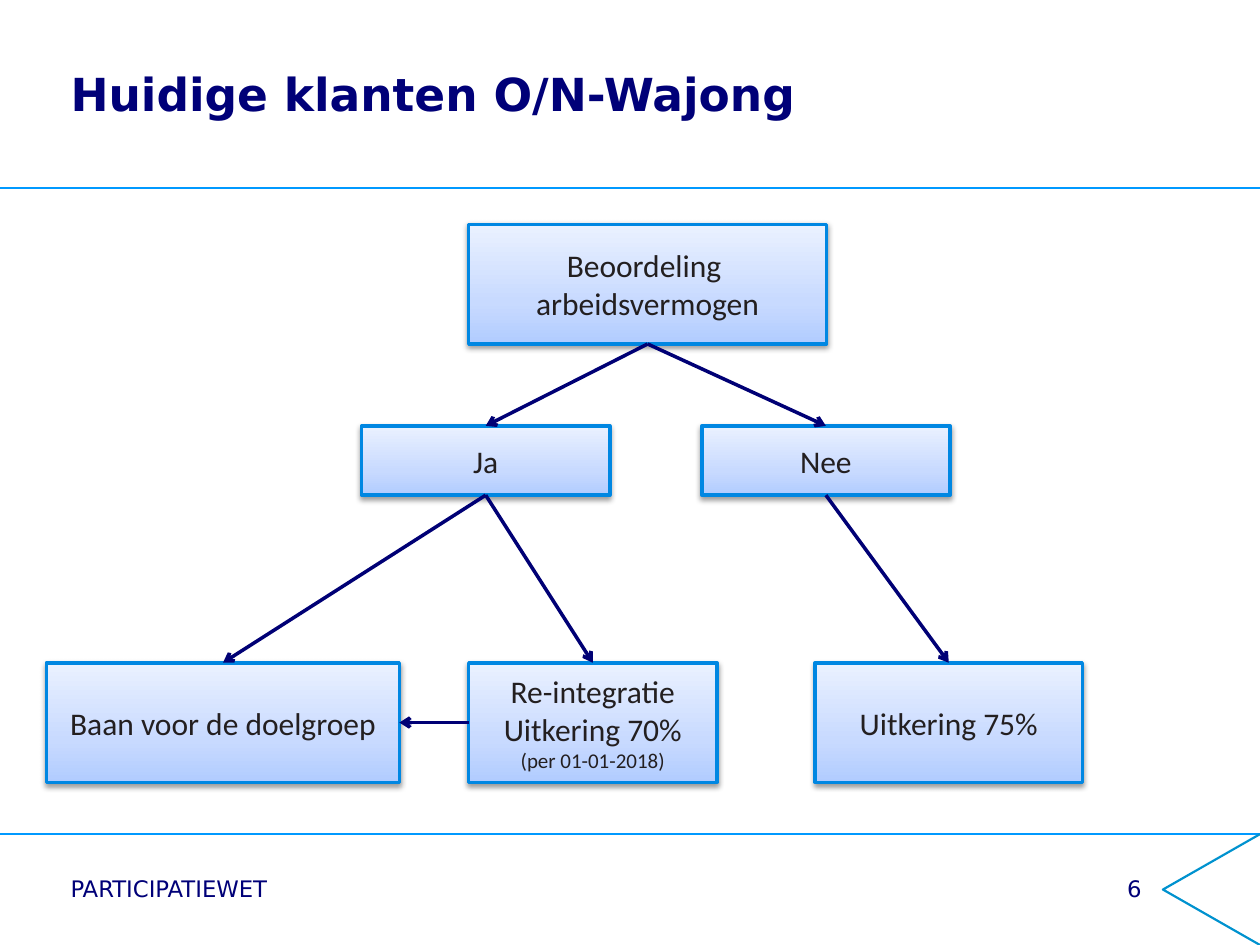
from lxml import etree
from pptx import Presentation
from pptx.dml.color import RGBColor
from pptx.enum.shapes import MSO_CONNECTOR, MSO_SHAPE
from pptx.enum.text import MSO_ANCHOR, PP_ALIGN
from pptx.oxml.ns import qn
from pptx.util import Inches, Pt

RECT = MSO_SHAPE.RECTANGLE
STRAIGHT = MSO_CONNECTOR.STRAIGHT
TOP, MIDDLE = MSO_ANCHOR.TOP, MSO_ANCHOR.MIDDLE
LEFT, CENTER, RIGHT = PP_ALIGN.LEFT, PP_ALIGN.CENTER, PP_ALIGN.RIGHT

NAVY = RGBColor(0x00, 0x00, 0x78)
ARROW = RGBColor(0x00, 0x00, 0x75)
RULE = RGBColor(0x00, 0x99, 0xFF)
CHEVRON = RGBColor(0x00, 0x92, 0xCF)
BORDER = RGBColor(0x00, 0x87, 0xE2)
INK = RGBColor(0x23, 0x1F, 0x20)
STOPS = [
    (0, RGBColor(0xB1, 0xCC, 0xFF)),
    (35, RGBColor(0xC8, 0xDA, 0xFF)),
    (100, RGBColor(0xEA, 0xF1, 0xFF)),
]
SHADOW = RGBColor(0x00, 0x00, 0x00)


def write(p, text, align, color, **font):
    p.alignment = align
    r = p.add_run()
    r.text = text
    r.font.color.rgb = color
    for name, value in font.items():
        setattr(r.font, name, value)


def connect(color, width, x1=0, y1=0, x2=0, y2=0):
    c = s.shapes.add_connector(STRAIGHT, Inches(x1), Inches(y1), Inches(x2), Inches(y2))
    c.line.color.rgb = color
    c.line.width = Pt(width)
    etree.SubElement(c._element.spPr, qn("a:effectLst"))
    return c


prs = Presentation()
prs.slide_width, prs.slide_height = Inches(10), Inches(7.5)
s = prs.slides.add_slide(prs.slide_layouts[6])

for y in (6.62, 1.49):
    connect(RULE, 1, 0, y, 10, y)

fb = s.shapes.build_freeform(Inches(10), Inches(6.62))
fb.add_line_segments([(Inches(9.23), Inches(7.06)), (Inches(10), Inches(7.5))], close=False)
sp = fb.convert_to_shape()
sp.shadow.inherit = False
sp.fill.background()
sp.line.color.rgb = CHEVRON
sp.line.width = Pt(1.25)

texts = [
    ("Huidige klanten O/N-Wajong", (0.42, 0.19, 9.24, 1.1), 0.14, MIDDLE, LEFT, 26, True),
    ("PARTICIPATIEWET", (0.42, 6.89, 6.13, 0.32), 0.14, TOP, LEFT, 13, False),
    ("6", (8.39, 6.89, 0.67, 0.32), 0, TOP, RIGHT, 13, False),
]
for text, box, inset, anchor, align, size, bold in texts:
    tf = s.shapes.add_textbox(*map(Inches, box)).text_frame
    fmt = {"word_wrap": True, "vertical_anchor": anchor,
           "margin_left": Inches(inset), "margin_right": 0}
    for name, value in fmt.items():
        setattr(tf, name, value)
    write(tf.paragraphs[0], text, align, NAVY, name="DejaVu Sans", size=Pt(size), bold=bold)

boxes = {
    "beoordeling": ((3.72, 1.78, 2.84, 0.95), [("Beoordeling ", 18), ("arbeidsvermogen", 18)]),
    "reintegratie": ((3.72, 5.26, 1.97, 0.95),
                     [("Re-integratie", 18), ("Uitkering 70%", 18), ("(per 01-01-2018)", 12)]),
    "baan": ((0.37, 5.26, 2.8, 0.95), [("Baan voor de doelgroep", 18)]),
    "uitkering": ((6.47, 5.26, 2.12, 0.95), [("Uitkering 75%", 18)]),
    "nee": ((5.57, 3.38, 1.97, 0.55), [("Nee", 18)]),
    "ja": ((2.87, 3.38, 1.97, 0.55), [("Ja", 18)]),
}
nodes = {}
for key, (box, lines) in boxes.items():
    sp = nodes[key] = s.shapes.add_shape(RECT, *map(Inches, box))
    sp.line.color.rgb = BORDER
    sp.line.width = Pt(2)
    sp.fill.gradient()
    sp.fill.gradient_angle = 90
    spPr = sp._element.spPr
    gs_lst = spPr.find(qn("a:gradFill")).find(qn("a:gsLst"))
    gs_lst.clear()
    for pos, color in STOPS:
        gs = etree.SubElement(gs_lst, qn("a:gs"), pos=str(pos * 1000))
        etree.SubElement(gs, qn("a:srgbClr"), val=str(color))
    sp.shadow.inherit = False
    shadow = etree.SubElement(spPr.find(qn("a:effectLst")), qn("a:outerShdw"),
                              blurRad=str(Pt(3.1)), dist=str(Pt(1.6)),
                              dir="5400000", rotWithShape="0")
    clr = etree.SubElement(shadow, qn("a:srgbClr"), val=str(SHADOW))
    etree.SubElement(clr, qn("a:alpha"), val="38000")
    tf = sp.text_frame
    tf.word_wrap = True
    tf.vertical_anchor = MIDDLE
    for i, (text, size) in enumerate(lines):
        p = tf.add_paragraph() if i else tf.paragraphs[0]
        write(p, text, CENTER, INK, name="Calibri", size=Pt(size))

links = [
    ("beoordeling", 2, "ja", 0),
    ("beoordeling", 2, "nee", 0),
    ("nee", 2, "uitkering", 0),
    ("ja", 2, "baan", 0),
    ("ja", 2, "reintegratie", 0),
    ("reintegratie", 1, "baan", 3),
]
for start, start_side, end, end_side in links:
    c = connect(ARROW, 2)
    c.begin_connect(nodes[start], start_side)
    c.end_connect(nodes[end], end_side)
    etree.SubElement(c.line._get_or_add_ln(), qn("a:tailEnd"), type="arrow")

prs.save("out.pptx")
